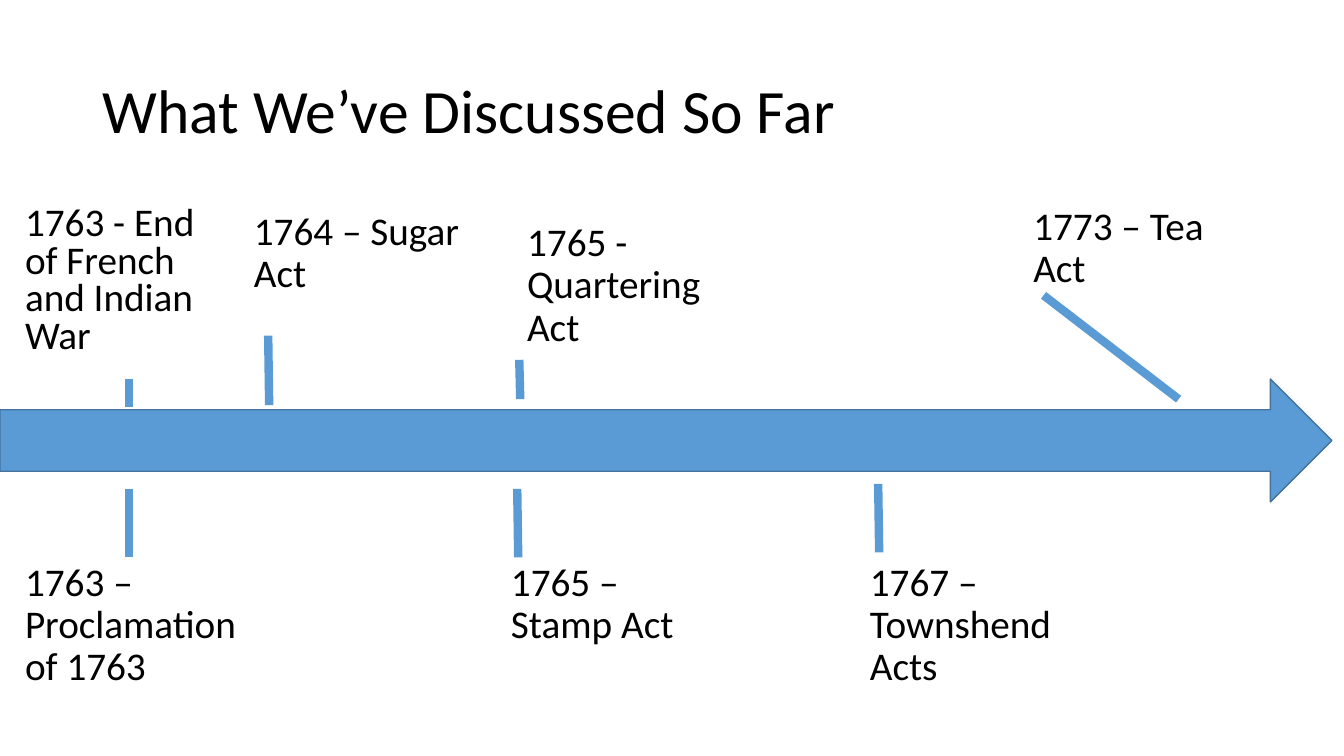
from pptx import Presentation
from pptx.dml.color import RGBColor
from pptx.enum.shapes import MSO_CONNECTOR, MSO_SHAPE
from pptx.enum.text import MSO_ANCHOR
from pptx.oxml.ns import qn
from pptx.util import Inches, Pt
from lxml import etree

COLORS = {"text": "000000", "blue": "5B9BD5", "outline": "43739E"}

deck = Presentation()
deck.slide_width = Inches(13.33)
deck.slide_height = Inches(7.5)
page = deck.slides.add_slide(deck.slide_layouts[6])


def add_text(text, left, top, width, height, size, spacing, anchor=MSO_ANCHOR.TOP):
    box = page.shapes.add_textbox(Inches(left), Inches(top), Inches(width), Inches(height))
    frame = box.text_frame
    frame.word_wrap = True
    frame.vertical_anchor = anchor
    frame.text = text
    para = frame.paragraphs[0]
    para.line_spacing = spacing
    font = para.runs[0].font
    font.name = "Calibri"
    font.size = Pt(size)
    font.color.rgb = RGBColor.from_string(COLORS["text"])


add_text("What We’ve Discussed So Far", 0.92, 0.4, 11.5, 1.45, 44, 0.9, MSO_ANCHOR.MIDDLE)

timeline = page.shapes.add_shape(
    MSO_SHAPE.RIGHT_ARROW, Inches(0), Inches(3.76), Inches(13.21), Inches(1.22)
)
timeline.shadow.inherit = False
timeline.fill.solid()
timeline.fill.fore_color.rgb = RGBColor.from_string(COLORS["blue"])
timeline.line.color.rgb = RGBColor.from_string(COLORS["outline"])
timeline.line.width = Pt(1)

events = [
    ("1763 - End of French and Indian War", 0.15, 2, 2.26, 0.8),
    ("1763 – Proclamation of 1763", 0.15, 5.53, 2.38, 0.9),
    ("1764 – Sugar Act", 2.42, 2.05, 2.26, 0.9),
    ("1765 – Stamp Act", 4.97, 5.53, 2.26, 0.9),
    ("1765 - Quartering Act", 5.13, 2.16, 2.26, 0.9),
    ("1767 – Townshend Acts", 8.53, 5.53, 2.26, 0.9),
    ("1773 – Tea Act", 10.15, 2, 2.26, 0.9),
]
for text, left, top, width, spacing in events:
    add_text(text, left, top, width, 1.77, 28, spacing)

markers = [
    (1.28, 3.76, 1.28, 4.04),
    (1.28, 4.85, 1.28, 5.53),
    (2.66, 3.33, 2.67, 4.02),
    (5.13, 4.85, 5.14, 5.53),
    (5.15, 3.57, 5.16, 3.96),
    (8.71, 4.8, 8.72, 5.48),
    (10.35, 2.93, 11.69, 3.96),
]
for ends in markers:
    marker = page.shapes.add_connector(MSO_CONNECTOR.STRAIGHT, *map(Inches, ends))
    marker.line.color.rgb = RGBColor.from_string(COLORS["blue"])
    marker.line.width = Pt(6)
    etree.SubElement(marker.element.spPr, qn("a:effectLst"))

deck.save("out.pptx")
